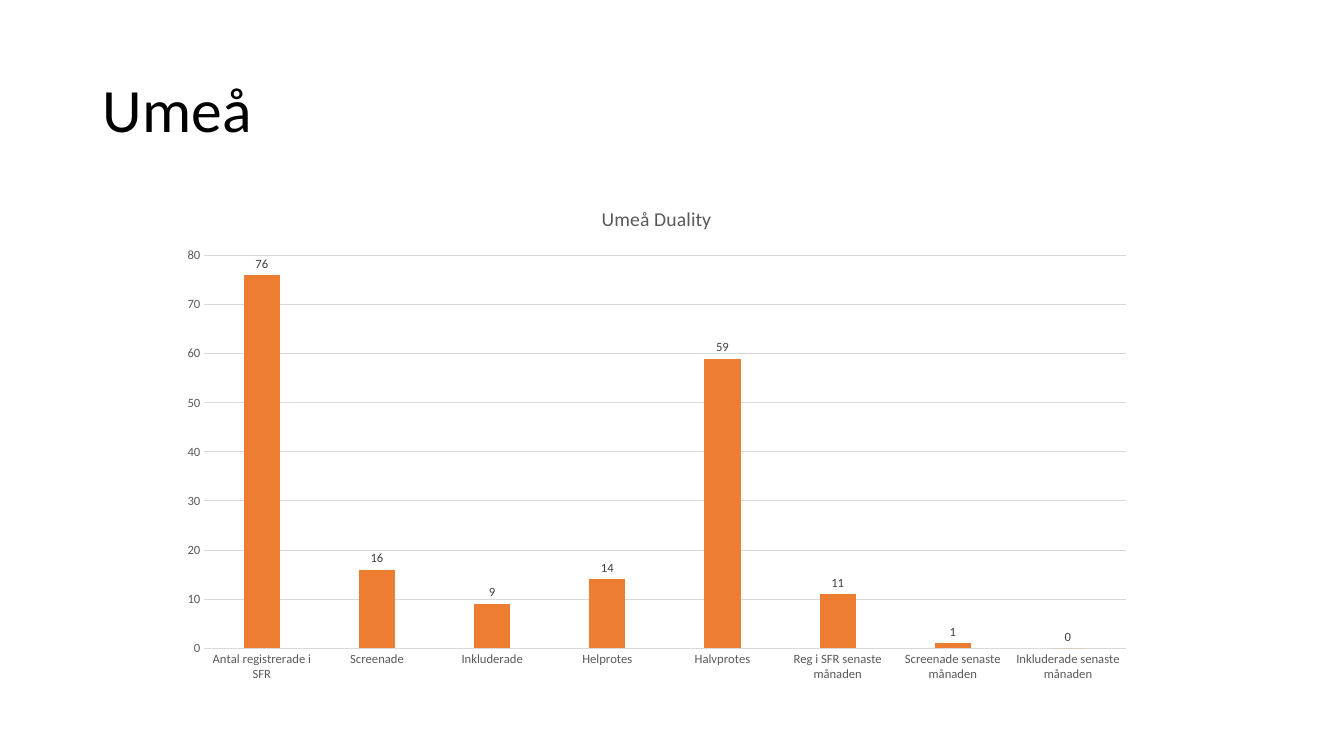
from pptx import Presentation
from pptx.chart.data import CategoryChartData
from pptx.dml.color import RGBColor
from pptx.enum.chart import XL_CHART_TYPE, XL_LABEL_POSITION, XL_TICK_MARK
from pptx.enum.text import MSO_ANCHOR, PP_ALIGN
from pptx.util import Inches, Pt

WIDTH, HEIGHT = Inches(13.33), Inches(7.5)
FONT = "Calibri"
BLACK = RGBColor(0x00, 0x00, 0x00)
TEXT_GREY = RGBColor(0x59, 0x59, 0x59)
LABEL_GREY = RGBColor(0x40, 0x40, 0x40)
LINE_GREY = RGBColor(0xD9, 0xD9, 0xD9)
ORANGE = RGBColor(0xED, 0x7D, 0x31)
TITLE_BOX = (0.069, 0.053, 0.863, 0.193)
CHART_BOX = (0.125, 0.247, 0.727, 0.668)
COUNTS = {
    "Antal registrerade i SFR": 76,
    "Screenade": 16,
    "Inkluderade": 9,
    "Helprotes": 14,
    "Halvprotes": 59,
    "Reg i SFR senaste månaden": 11,
    "Screenade senaste månaden": 1,
    "Inkluderade senaste månaden": 0,
}


def place(box):
    """Turn shares of the slide into left, top, width and height."""
    return [round(share * side) for share, side in zip(box, (WIDTH, HEIGHT) * 2)]


def style_font(font, size, color):
    """Set the typeface, size and colour of a font."""
    font.name, font.size, font.bold = FONT, Pt(size), False
    font.color.rgb = color


def style_line(line):
    """Give a line the thin grey look of the chart."""
    line.color.rgb = LINE_GREY
    line.width = Pt(0.75)


def set_title(s, text):
    """Fill, move and format the title placeholder."""
    sp = s.shapes.title
    sp.left, sp.top, sp.width, sp.height = place(TITLE_BOX)
    tf = sp.text_frame
    tf.text = text
    tf.word_wrap = True
    tf.vertical_anchor = MSO_ANCHOR.MIDDLE
    p = tf.paragraphs[0]
    p.alignment = PP_ALIGN.LEFT
    p.line_spacing = 0.9
    style_font(p.runs[0].font, 44, BLACK)


def style_axes(chart):
    """Format the category and value axes."""
    for axis in (chart.category_axis, chart.value_axis):
        axis.major_tick_mark = axis.minor_tick_mark = XL_TICK_MARK.NONE
        style_font(axis.tick_labels.font, 9, TEXT_GREY)
    style_line(chart.category_axis.format.line)
    axis = chart.value_axis
    axis.minimum_scale, axis.maximum_scale, axis.major_unit = 0, 80, 10
    axis.format.line.fill.background()
    style_line(axis.major_gridlines.format.line)


def add_column_chart(s, title, counts):
    """Add the column chart with its title and value labels."""
    data = CategoryChartData()
    data.categories = list(counts)
    data.add_series("Series 1", list(counts.values()))
    chart = s.shapes.add_chart(
        XL_CHART_TYPE.COLUMN_CLUSTERED, *place(CHART_BOX), data).chart
    style_font(chart.font, 10, BLACK)
    chart.has_legend = False
    chart.has_title = True
    tf = chart.chart_title.text_frame
    tf.text = title
    style_font(tf.paragraphs[0].runs[0].font, 14, TEXT_GREY)
    style_axes(chart)
    plot = chart.plots[0]
    plot.gap_width, plot.overlap, plot.vary_by_categories = 219, -27, False
    series = plot.series[0]
    series.format.fill.solid()
    series.format.fill.fore_color.rgb = ORANGE
    labels = series.data_labels
    labels.show_value = True
    labels.position = XL_LABEL_POSITION.OUTSIDE_END
    style_font(labels.font, 9, LABEL_GREY)


def main():
    """Build the slide and save it."""
    prs = Presentation()
    prs.slide_width, prs.slide_height = WIDTH, HEIGHT
    s = prs.slides.add_slide(prs.slide_layouts[5])
    set_title(s, "Umeå")
    add_column_chart(s, "Umeå Duality", COUNTS)
    prs.save("out.pptx")


if __name__ == "__main__":
    main()
